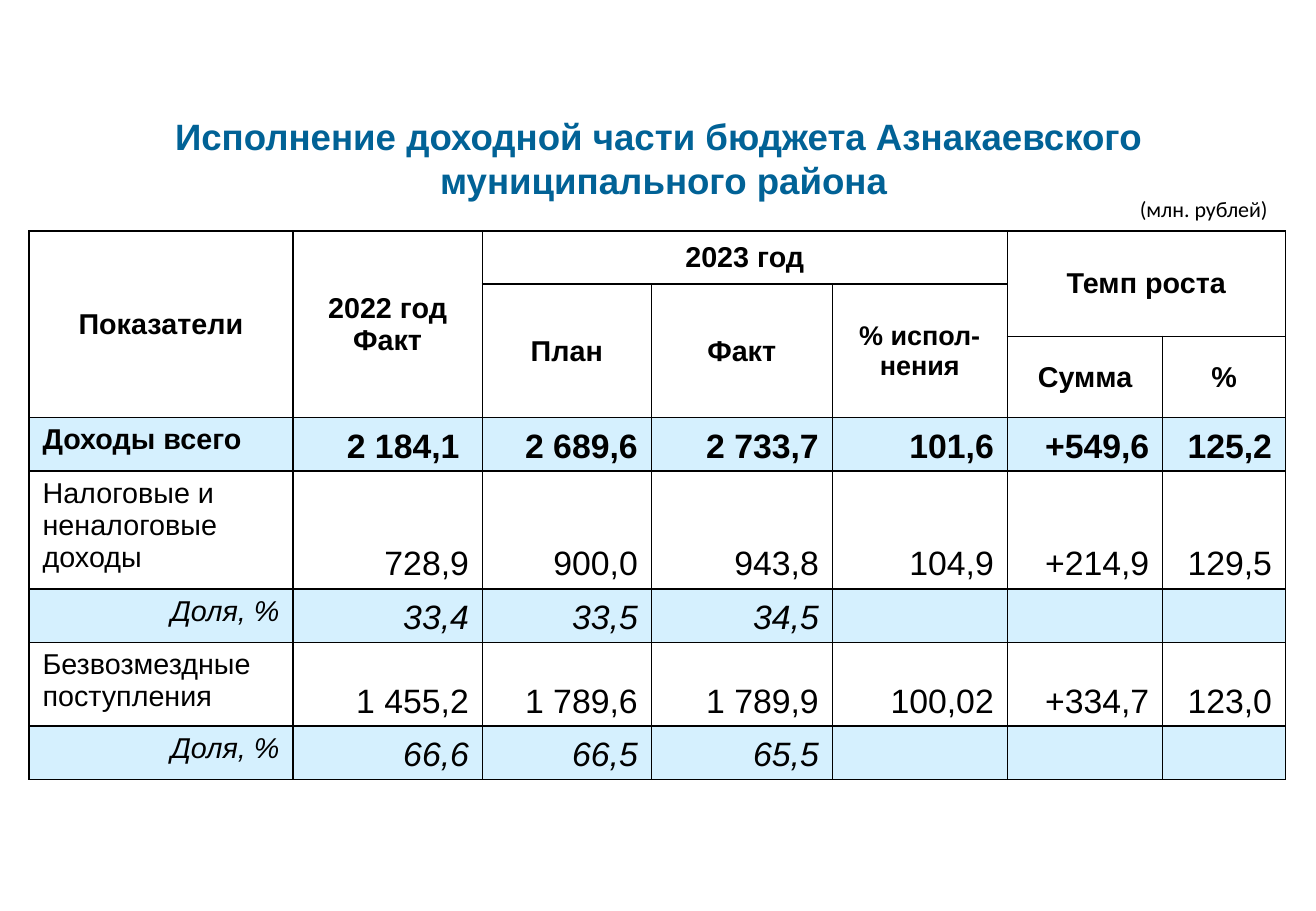
from dataclasses import dataclass

from lxml import etree
from pptx import Presentation
from pptx.dml.color import RGBColor
from pptx.enum.text import MSO_ANCHOR, PP_ALIGN
from pptx.oxml import parse_xml
from pptx.oxml.ns import nsdecls, qn
from pptx.util import Inches, Pt

LEFT, CENTER, RIGHT = PP_ALIGN.LEFT, PP_ALIGN.CENTER, PP_ALIGN.RIGHT
TOP, MIDDLE, BOTTOM = MSO_ANCHOR.TOP, MSO_ANCHOR.MIDDLE, MSO_ANCHOR.BOTTOM

BLACK = "000000"
TITLE_BLUE = "016296"
ROW_BLUE = "31B6FD"
ROW_OPACITY = 20  # percent
COLUMN_WIDTHS = [2.17, 1.56, 1.39, 1.49, 1.44, 1.28, 1.01]
HEADER_HEIGHTS = [0.44, 0.43, 0.67]


@dataclass
class Style:
    size: float
    bold: bool = False
    italic: bool = False
    align: PP_ALIGN = CENTER
    font: str = "Arial"
    color: str = BLACK


@dataclass
class HeaderCell:
    text: str
    row: int
    column: int
    rows: int = 1
    columns: int = 1
    size: float = 17


@dataclass
class DataRow:
    label: str
    values: list[str]
    height: float = 0.44
    bold: bool = False
    share: bool = False


HEADERS = [
    HeaderCell("Показатели", 0, 0, rows=3),
    HeaderCell("2022 год\nФакт", 0, 1, rows=3),
    HeaderCell("2023 год", 0, 2, columns=3),
    HeaderCell("Темп роста", 0, 5, rows=2, columns=2),
    HeaderCell("План", 1, 2, rows=2),
    HeaderCell("Факт", 1, 3, rows=2),
    HeaderCell("% испол-нения", 1, 4, rows=2, size=16),
    HeaderCell("Сумма", 2, 5),
    HeaderCell("%", 2, 6),
]

DATA_ROWS = [
    DataRow("Доходы всего", ["2 184,1 ", "2 689,6", "2 733,7", "101,6", "+549,6", "125,2"],
            bold=True),
    DataRow("Налоговые и неналоговые доходы",
            ["728,9", "900,0", "943,8", "104,9", "+214,9", "129,5"], height=0.97),
    DataRow("Доля, %", ["33,4", "33,5", "34,5", "", "", ""], share=True),
    DataRow("Безвозмездные поступления",
            ["1 455,2", "1 789,6", "1 789,9", "100,02", "+334,7", "123,0"], height=0.69),
    DataRow("Доля, %", ["66,6", "66,5", "65,5", "", "", ""], share=True),
]


def rgb(value: str) -> RGBColor:
    return RGBColor.from_string(value)


def write(frame, text: str, style: Style) -> None:
    frame.text = text
    for para in frame.paragraphs:
        para.alignment = style.align
        for font in [para.font] + [span.font for span in para.runs]:
            font.name = style.font
            font.size = Pt(style.size)
            font.bold = style.bold
            font.italic = style.italic
            font.color.rgb = rgb(style.color)


def add_text(page, text: str, left: float, top: float, width: float, height: float,
             style: Style, wrap: bool) -> None:
    box = page.shapes.add_textbox(Inches(left), Inches(top), Inches(width), Inches(height))
    box.text_frame.word_wrap = wrap
    write(box.text_frame, text, style)


def add_borders(cell) -> None:
    properties = cell._tc.get_or_add_tcPr()
    for side in ("lnL", "lnR", "lnT", "lnB"):
        properties.append(parse_xml(
            f'<a:{side} {nsdecls("a")} w="{Pt(1)}"><a:solidFill>'
            f'<a:srgbClr val="{BLACK}"/></a:solidFill></a:{side}>'))


def fill_cell(cell, shaded: bool) -> None:
    if not shaded:
        cell.fill.background()
        return
    cell.fill.solid()
    cell.fill.fore_color.rgb = rgb(ROW_BLUE)
    color = cell._tc.tcPr.find(qn("a:solidFill")).find(qn("a:srgbClr"))
    etree.SubElement(color, qn("a:alpha")).set("val", str(ROW_OPACITY * 1000))


def write_cell(cell, text: str, style: Style, anchor: MSO_ANCHOR) -> None:
    write(cell.text_frame, text, style)
    cell.vertical_anchor = anchor


def add_budget_table(page) -> None:
    heights = HEADER_HEIGHTS + [row.height for row in DATA_ROWS]
    frame = page.shapes.add_table(
        len(heights), len(COLUMN_WIDTHS), Inches(0.24), Inches(1.9),
        Inches(sum(COLUMN_WIDTHS)), Inches(sum(heights)))
    table = frame.table
    table.first_row = table.horz_banding = False
    for column, width in zip(table.columns, COLUMN_WIDTHS):
        column.width = Inches(width)

    # Borders, margins and fills
    shading = [False] * len(HEADER_HEIGHTS) + [row.bold or row.share for row in DATA_ROWS]
    for row, height, shaded in zip(table.rows, heights, shading):
        row.height = Inches(height)
        for cell in row.cells:
            cell.margin_left = cell.margin_right = Inches(0.11)
            cell.margin_top = cell.margin_bottom = Inches(0.05)
            add_borders(cell)
            fill_cell(cell, shaded)

    # Merged header
    for header in HEADERS:
        cell = table.cell(header.row, header.column)
        if header.rows * header.columns > 1:
            cell.merge(table.cell(header.row + header.rows - 1,
                                  header.column + header.columns - 1))
        write_cell(cell, header.text, Style(header.size, bold=True), MIDDLE)

    # Labels and figures
    for index, row in enumerate(DATA_ROWS, len(HEADER_HEIGHTS)):
        label_style = Style(17, row.bold, row.share, RIGHT if row.share else LEFT)
        write_cell(table.cell(index, 0), row.label, label_style, TOP)
        for column, value in enumerate(row.values, 1):
            write_cell(table.cell(index, column), value,
                       Style(20, row.bold, row.share, RIGHT), BOTTOM)


def main() -> None:
    deck = Presentation()
    deck.slide_width, deck.slide_height = Inches(10.83), Inches(7.5)
    page = deck.slides.add_slide(deck.slide_layouts[6])

    # Title and unit
    add_text(page, "Исполнение доходной части бюджета Азнакаевского\n муниципального района",
             1.31, 0.89, 8.22, 0.83, Style(21.7, bold=True, color=TITLE_BLUE), wrap=False)
    add_text(page, "(млн. рублей)", 9.1, 1.56, 1.61, 0.32,
             Style(13, font="Calibri"), wrap=True)

    add_budget_table(page)
    deck.save("out.pptx")


if __name__ == "__main__":
    main()
